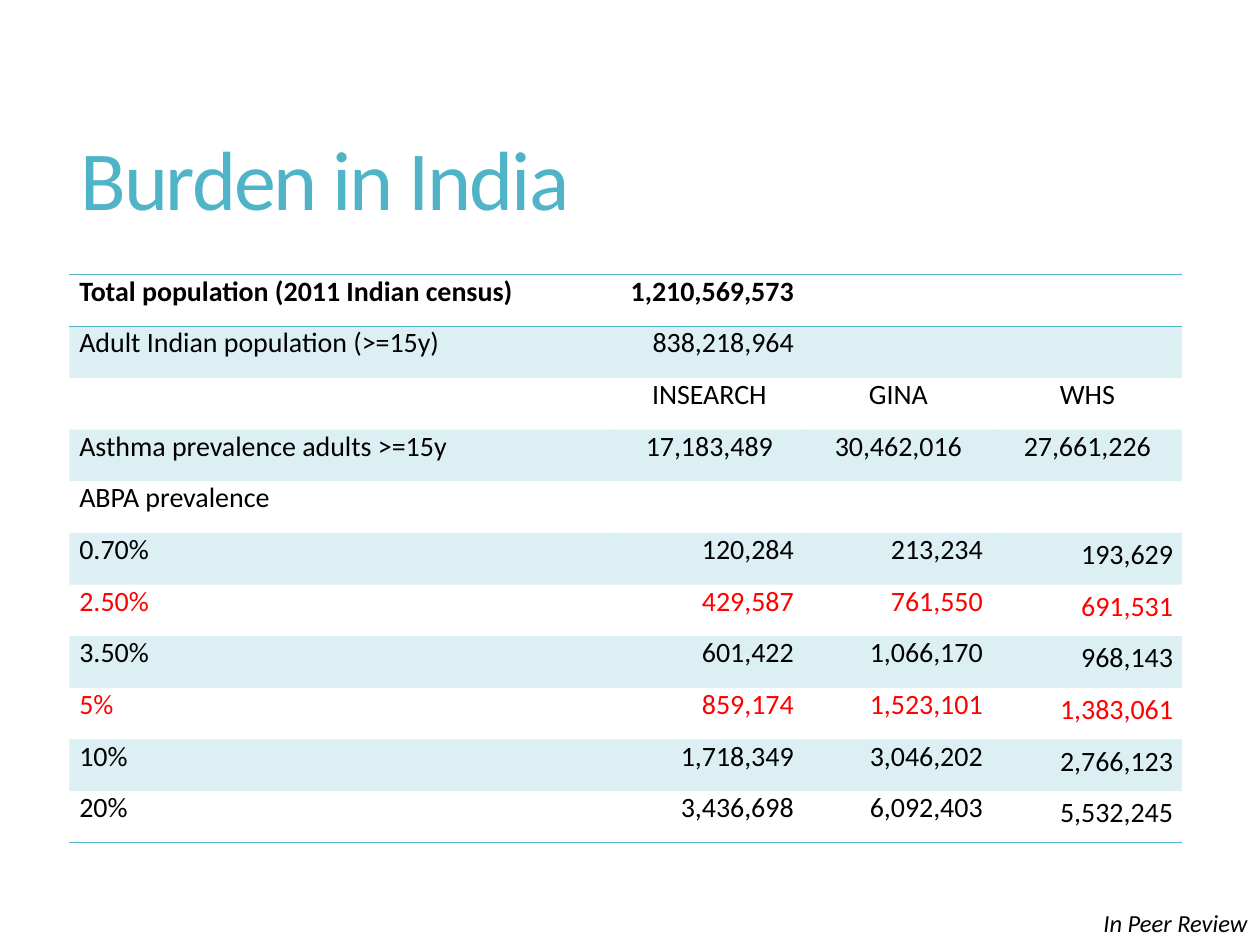
from dataclasses import dataclass

from lxml.etree import SubElement
from pptx import Presentation
from pptx.dml.color import RGBColor
from pptx.enum.text import MSO_ANCHOR, PP_ALIGN
from pptx.oxml import parse_xml
from pptx.oxml.ns import nsdecls, qn
from pptx.util import Inches, Pt


@dataclass(frozen=True)
class Theme:
    font: str = "Calibri"
    teal: str = "50B4C8"
    black: str = "000000"
    red: str = "FF0000"
    title: int = 48
    body: int = 16
    note: int = 14


THEME = Theme()
NO_GRID = "{2D5ABB26-0587-4C30-8999-92F81FD0307C}"
COLS = (4.33, 1.5, 1.5, 1.5)
ROW = 0.41
ROWS = (
    ("Total population (2011 Indian census)", "1,210,569,573", "", ""),
    ("Adult Indian population (>=15y)", "838,218,964", "", ""),
    ("", "INSEARCH", "GINA", "WHS"),
    ("Asthma prevalence adults >=15y", "17,183,489", "30,462,016", "27,661,226"),
    ("ABPA prevalence", "", "", ""),
    ("0.70%", "120,284", "213,234", "193,629"),
    ("2.50%", "429,587", "761,550", "691,531"),
    ("3.50%", "601,422", "1,066,170", "968,143"),
    ("5%", "859,174", "1,523,101", "1,383,061"),
    ("10%", "1,718,349", "3,046,202", "2,766,123"),
    ("20%", "3,436,698", "6,092,403", "5,532,245"),
)
CENTRED = (2, 3)
RED = (6, 8)
RATES = 5  # first row of prevalence rates


def style(para, size, color):
    para.font.name = THEME.font
    para.font.size = Pt(size)
    para.font.color.rgb = RGBColor.from_string(color)


def add_text(slide, box, text, size, color):
    shape = slide.shapes.add_textbox(*map(Inches, box))
    frame = shape.text_frame
    frame.word_wrap = True
    para = frame.paragraphs[0]
    para.text = text
    style(para, size, color)
    return frame, para


def add_title(slide, box):
    frame, para = add_text(slide, box, "Burden in India", THEME.title, THEME.teal)
    frame.vertical_anchor = MSO_ANCHOR.MIDDLE
    para.line_spacing = 0.9
    para.runs[0].font._element.set("spc", "-120")


def add_note(slide, box):
    _, para = add_text(slide, box, "In Peer Review", THEME.note, THEME.black)
    para.alignment = PP_ALIGN.RIGHT
    para.font.italic = True


def tint(cell):
    """Fill the cell with the accent colour at 20% opacity."""
    cell.fill.solid()
    cell.fill.fore_color.rgb = RGBColor.from_string(THEME.teal)
    color = cell._tc.tcPr.find(".//" + qn("a:srgbClr"))
    SubElement(color, qn("a:alpha"), val="20000")


def rule(cell, sides):
    """Draw accent borders, given in schema order, on the cell."""
    for spot, side in enumerate(sides):
        line = parse_xml(
            f'<a:ln{side} {nsdecls("a")} w="12700"><a:solidFill>'
            f'<a:srgbClr val="{THEME.teal}"/></a:solidFill></a:ln{side}>')
        cell._tc.get_or_add_tcPr().insert(spot, line)


def fill_cell(cell, text, row, col):
    rate = row >= RATES and col == len(COLS) - 1
    cell.margin_left = cell.margin_right = Inches(0.07 if rate else 0.08)
    cell.margin_top = cell.margin_bottom = 0
    para = cell.text_frame.paragraphs[0]
    para.text = text
    style(para, THEME.body, THEME.red if row in RED else THEME.black)
    para.font.bold = row == 0
    if col:
        para.alignment = PP_ALIGN.CENTER if row in CENTRED else PP_ALIGN.RIGHT
    if rate:
        para.line_spacing = 1.15
    if row % 2:
        tint(cell)
    if row == 0:
        rule(cell, "TB")
    elif row == len(ROWS) - 1:
        rule(cell, "B")


def add_burden(slide, left, top):
    size = (sum(COLS), ROW * len(ROWS))
    box = map(Inches, (left, top, *size))
    table = slide.shapes.add_table(len(ROWS), len(COLS), *box).table
    table._tbl.tblPr.find(qn("a:tableStyleId")).text = NO_GRID
    for col, width in zip(table.columns, COLS):
        col.width = Inches(width)
    for r, texts in enumerate(ROWS):
        table.rows[r].height = Inches(ROW)
        for c, text in enumerate(texts):
            fill_cell(table.cell(r, c), text, r, c)


def main():
    deck = Presentation()
    deck.slide_width, deck.slide_height = Inches(10), Inches(7.5)
    slide = deck.slides.add_slide(deck.slide_layouts[6])
    add_title(slide, (0.54, 0.55, 8.84, 1.81))
    add_burden(slide, 0.55, 2.18)
    add_note(slide, (4.25, 7.16, 5.75, 0.34))
    deck.save("out.pptx")


if __name__ == "__main__":
    main()
